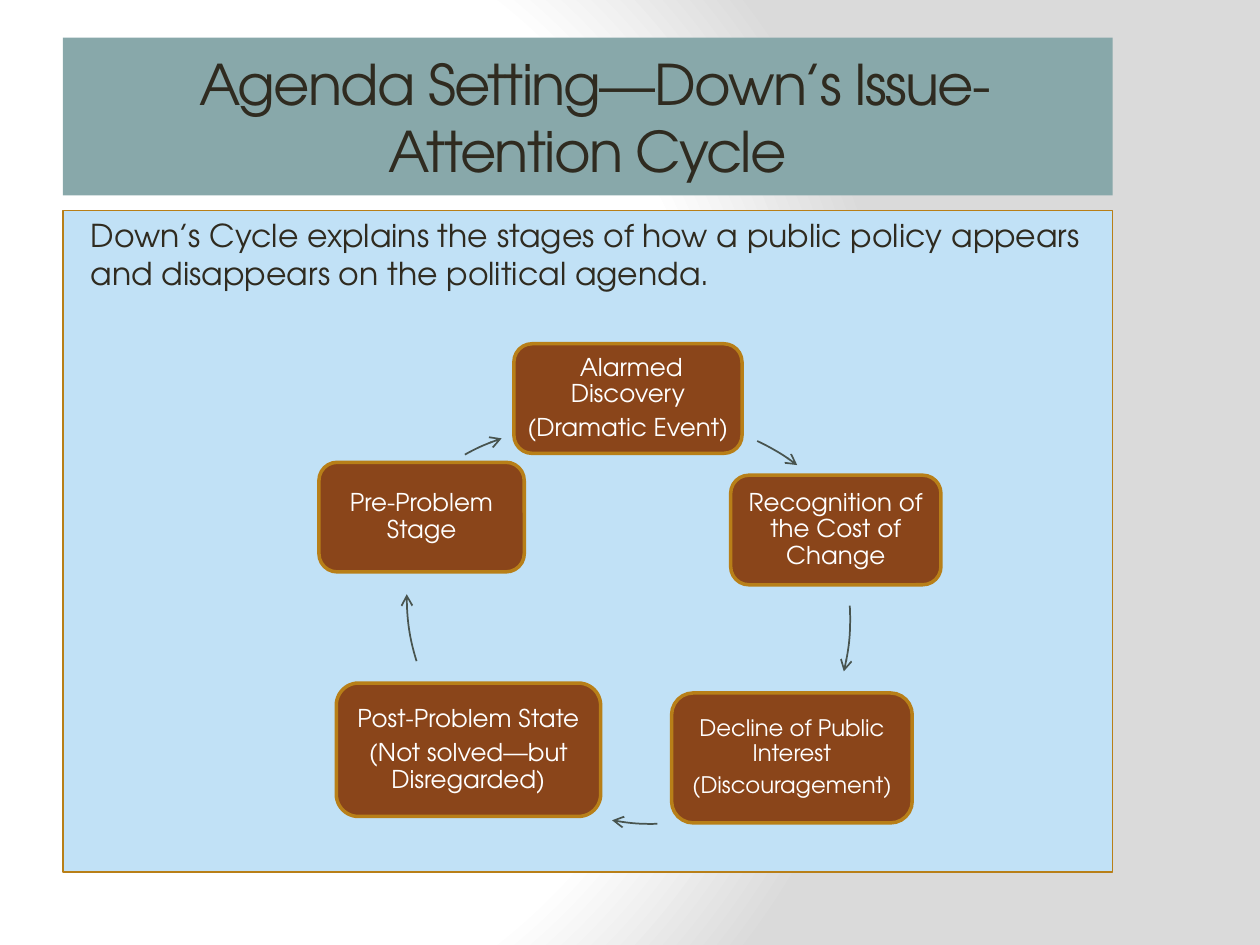
"""Build a slide showing Down's issue-attention cycle."""
from dataclasses import dataclass

from lxml.etree import SubElement
from pptx import Presentation
from pptx.dml.color import RGBColor
from pptx.enum.shapes import MSO_SHAPE
from pptx.enum.text import MSO_ANCHOR, PP_ALIGN
from pptx.oxml import parse_xml
from pptx.oxml.ns import qn
from pptx.util import Cm, Pt


@dataclass
class Theme:
    font: str = "TeX Gyre Adventor"
    ink: str = "2F2B20"
    white: str = "FFFFFF"
    grey: str = "DADADA"
    banner: str = "88A8AA"
    panel: str = "C1E1F6"
    node: str = "8A451A"
    border: str = "B87F18"
    arrow: str = "48544F"
    title_size: int = 32
    body_size: int = 18
    node_size: int = 14
    small_size: int = 13


theme = Theme()


def add_box(shapes, kind, box, fill, line=None, width=1):
    sp = shapes.add_shape(kind, *[Cm(v) for v in box])
    sp.shadow.inherit = False
    if fill:
        sp.fill.solid()
        sp.fill.fore_color.rgb = RGBColor.from_string(fill)
    else:
        sp.fill.background()
    if line:
        sp.line.color.rgb = RGBColor.from_string(line)
        sp.line.width = Pt(width)
    else:
        sp.line.fill.background()
    return sp


def write(sp, text, size, color, align, anchor):
    tf = sp.text_frame
    tf.word_wrap = True
    tf.vertical_anchor = anchor
    tf.text = text
    for p in tf.paragraphs:
        p.alignment = align
        for r in p.runs:
            r.font.name = theme.font
            r.font.size = Pt(size)
            r.font.color.rgb = RGBColor.from_string(color)
    return tf


prs = Presentation()
prs.slide_width, prs.slide_height = Cm(25.4), Cm(19.05)
s = prs.slides.add_slide(prs.slide_layouts[6])

s.background.fill.solid()
solid = next(s.element.iter(qn("a:solidFill")))
stops = "".join(
    f'<a:gs pos="{pos}"><a:srgbClr val="{color}"/></a:gs>'
    for pos, color in [(0, theme.white), (75000, theme.white), (100000, theme.grey)]
)
solid.getparent().replace(solid, parse_xml(
    '<a:gradFill xmlns:a="http://schemas.openxmlformats.org/drawingml/2006/main" rotWithShape="1">'
    f'<a:gsLst>{stops}</a:gsLst><a:path path="circle">'
    '<a:fillToRect l="20000" t="50000" r="100000" b="50000"/></a:path></a:gradFill>'
))

title = add_box(s.shapes, MSO_SHAPE.RECTANGLE, (1.27, 0.76, 21.16, 3.18), theme.banner)
tf = write(title, " Agenda Setting—Down’s Issue-Attention Cycle", theme.title_size,
           theme.ink, PP_ALIGN.CENTER, MSO_ANCHOR.MIDDLE)
tf.paragraphs[0].runs[0].font._element.set("spc", "-100")

body = add_box(s.shapes, MSO_SHAPE.RECTANGLE, (1.27, 4.24, 21.16, 13.34),
               theme.panel, theme.border, 0.75)
tf = write(body, "Down’s Cycle explains the stages of how a public policy appears "
           "and disappears on the political agenda.", theme.body_size,
           theme.ink, PP_ALIGN.LEFT, MSO_ANCHOR.TOP)
tf.margin_left = Cm(0.56)

cycle = s.shapes.add_group_shape().shapes
stages = [
    (" Alarmed Discovery\n(Dramatic Event)", (10.36, 6.93, 4.6, 2.21), theme.node_size),
    ("Recognition of the Cost of Change", (14.73, 9.58, 4.24, 2.21), theme.node_size),
    ("Decline of Public Interest\n(Discouragement)", (13.54, 13.97, 4.85, 2.62), theme.small_size),
    ("Post-Problem State\n(Not solved—but Disregarded)", (6.78, 13.77, 5.33, 2.69), theme.node_size),
    ("Pre-Problem Stage", (6.43, 9.32, 4.14, 2.21), theme.node_size),
]
for text, box, size in stages:
    sp = add_box(cycle, MSO_SHAPE.ROUNDED_RECTANGLE, box, theme.node, theme.border, 2)
    tf = write(sp, text, size, theme.white, PP_ALIGN.CENTER, MSO_ANCHOR.MIDDLE)
    tf.margin_left = tf.margin_right = tf.margin_top = tf.margin_bottom = Cm(0.14)
    for p in tf.paragraphs:
        p.line_spacing = 0.9
        p.space_after = Pt(4.5)

diameter = 8.86
arcs = [
    (8.97, 8.48, 294.9, 307.1),
    (8.28, 8.05, 356.5, 13.8),
    (8.71, 7.75, 88.5, 100.4),
    (8.2, 7.59, 162.8, 180.5),
    (7.09, 8.61, 241, 251.5),
]
for left, top, start, end in arcs:
    sp = add_box(cycle, MSO_SHAPE.ARC, (left, top, diameter, diameter), None, theme.arrow)
    for i, angle in enumerate((start, end)):
        sp.adjustments[i] = angle * 0.6
    SubElement(sp.line._get_or_add_ln(), qn("a:tailEnd"), type="arrow")

prs.save("out.pptx")
